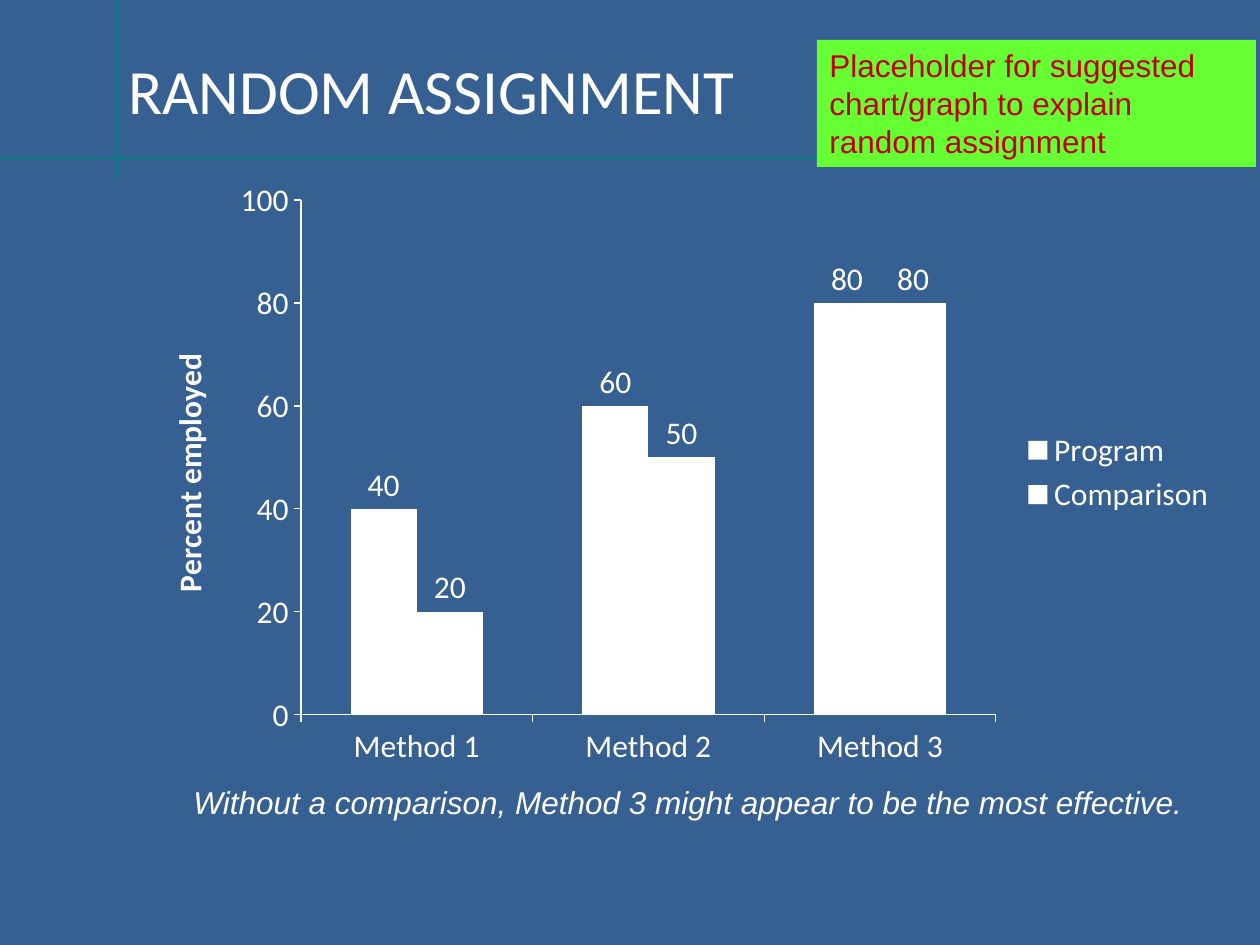
"""Build the random assignment slide with its clustered column chart."""
import lxml.etree
import pptx
import pptx.chart.data
import pptx.dml.color
import pptx.enum.chart
import pptx.enum.shapes
import pptx.enum.text
import pptx.oxml
import pptx.oxml.ns
import pptx.util

RGBColor = pptx.dml.color.RGBColor
WHITE = RGBColor(0xFF, 0xFF, 0xFF)
BLUE = RGBColor(0x37, 0x60, 0x92)
TEAL = RGBColor(0x00, 0x80, 0x80)
GREEN = RGBColor(0x66, 0xFF, 0x33)
RED = RGBColor(0xC0, 0x00, 0x00)

TITLE = "RANDOM ASSIGNMENT"
CAPTION = "Without a comparison, Method 3 might appear to be the most effective."
NOTE = "Placeholder for suggested chart/graph to explain random assignment"
AXIS_TITLE = "Percent employed"
METHODS = ["Method 1", "Method 2", "Method 3"]
SERIES = [("Program", (40, 60, 80)), ("Comparison", (20, 50, 80))]

TITLE_RULES = [(0, 158, 1239, 158), (116, 0, 116, 179)]
TITLE_AREA = (116, 10, 1134, 158)
CHART_AREA = (139, 168, 1090, 609)
PLOT_AREA = (301, 200, 695, 515)
CAPTION_AREA = (116, 777, 1144, 50)
NOTE_AREA = (817, 40, 439, 127)


def px(length):
    return round(length * 914400 / 126)


def place(area):
    return [px(length) for length in area]


def style_font(font, name, size, color, bold=False, italic=False):
    font.name = name
    font.size = pptx.util.Pt(size)
    font.color.rgb = color
    font.bold = bold
    font.italic = italic


def write(box, text, name, size, color, align="LEFT", anchor="TOP", italic=False):
    frame = box.text_frame
    frame.word_wrap = True
    frame.vertical_anchor = getattr(pptx.enum.text.MSO_ANCHOR, anchor)
    frame.text = text
    para = frame.paragraphs[0]
    para.alignment = getattr(pptx.enum.text.PP_ALIGN, align)
    style_font(para.runs[0].font, name, size, color, italic=italic)


def add_rule(page, ends):
    rule = page.shapes.add_connector(pptx.enum.shapes.MSO_CONNECTOR.STRAIGHT, *place(ends))
    rule.line.color.rgb = TEAL
    rule.line.width = pptx.util.Pt(0.75)
    properties = rule.element.find(pptx.oxml.ns.qn("p:spPr"))
    lxml.etree.SubElement(properties, pptx.oxml.ns.qn("a:effectLst"))


def fix_plot_area(chart):
    left, top, width, height = CHART_AREA
    x, y, w, h = PLOT_AREA
    shares = {"x": (x - left) / width, "y": (y - top) / height, "w": w / width, "h": h / height}
    tags = '<c:layoutTarget val="inner"/><c:xMode val="edge"/><c:yMode val="edge"/>'
    tags += "".join(f'<c:{key} val="{share:.4f}"/>' for key, share in shares.items())
    namespace = "http://schemas.openxmlformats.org/drawingml/2006/chart"
    layout = pptx.oxml.parse_xml(
        f'<c:layout xmlns:c="{namespace}"><c:manualLayout>{tags}</c:manualLayout></c:layout>')
    plot_area = chart.element.find(f".//{{{namespace}}}plotArea")
    for old in plot_area.findall(f"{{{namespace}}}layout"):
        plot_area.remove(old)
    plot_area.insert(0, layout)


def add_employment_chart(page):
    data = pptx.chart.data.CategoryChartData()
    data.categories = METHODS
    for name, values in SERIES:
        data.add_series(name, values)
    kinds = pptx.enum.chart
    chart = page.shapes.add_chart(
        kinds.XL_CHART_TYPE.COLUMN_CLUSTERED, *place(CHART_AREA), data).chart
    chart.has_title = False
    style_font(chart.font, "Calibri", 18, WHITE)
    chart.has_legend = True
    chart.legend.position = kinds.XL_LEGEND_POSITION.RIGHT
    chart.legend.include_in_layout = False

    for axis in (chart.category_axis, chart.value_axis):
        axis.has_major_gridlines = False
        axis.major_tick_mark = kinds.XL_TICK_MARK.OUTSIDE
        axis.minor_tick_mark = kinds.XL_TICK_MARK.NONE
        axis.format.line.color.rgb = WHITE
        axis.format.line.width = pptx.util.Pt(0.75)
    scale = chart.value_axis
    scale.minimum_scale, scale.maximum_scale, scale.major_unit = 0, 100, 20
    scale.axis_title.text_frame.text = AXIS_TITLE
    span = scale.axis_title.text_frame.paragraphs[0].runs[0]
    style_font(span.font, "Calibri", 18, WHITE, bold=True)

    plot = chart.plots[0]
    plot.gap_width = 150
    plot.vary_by_categories = False
    for series in plot.series:
        series.format.fill.solid()
        series.format.fill.fore_color.rgb = WHITE
        series.data_labels.show_value = True
        series.data_labels.position = kinds.XL_LABEL_POSITION.OUTSIDE_END
    fix_plot_area(chart)


def main():
    deck = pptx.Presentation()
    deck.slide_width, deck.slide_height = px(1260), px(945)
    page = deck.slides.add_slide(deck.slide_layouts[6])
    page.background.fill.solid()
    page.background.fill.fore_color.rgb = BLUE

    for ends in TITLE_RULES:
        add_rule(page, ends)
    title = page.shapes.add_textbox(*place(TITLE_AREA))
    write(title, TITLE, "Calibri", 36, WHITE, anchor="MIDDLE")
    add_employment_chart(page)
    caption = page.shapes.add_textbox(*place(CAPTION_AREA))
    write(caption, CAPTION, "Arial", 18, WHITE, align="CENTER", italic=True)
    note = page.shapes.add_shape(
        pptx.enum.shapes.MSO_SHAPE.RECTANGLE, *place(NOTE_AREA))
    note.shadow.inherit = False
    note.fill.solid()
    note.fill.fore_color.rgb = GREEN
    note.line.fill.background()
    write(note, NOTE, "Arial", 18, RED)
    deck.save("out.pptx")


if __name__ == "__main__":
    main()
